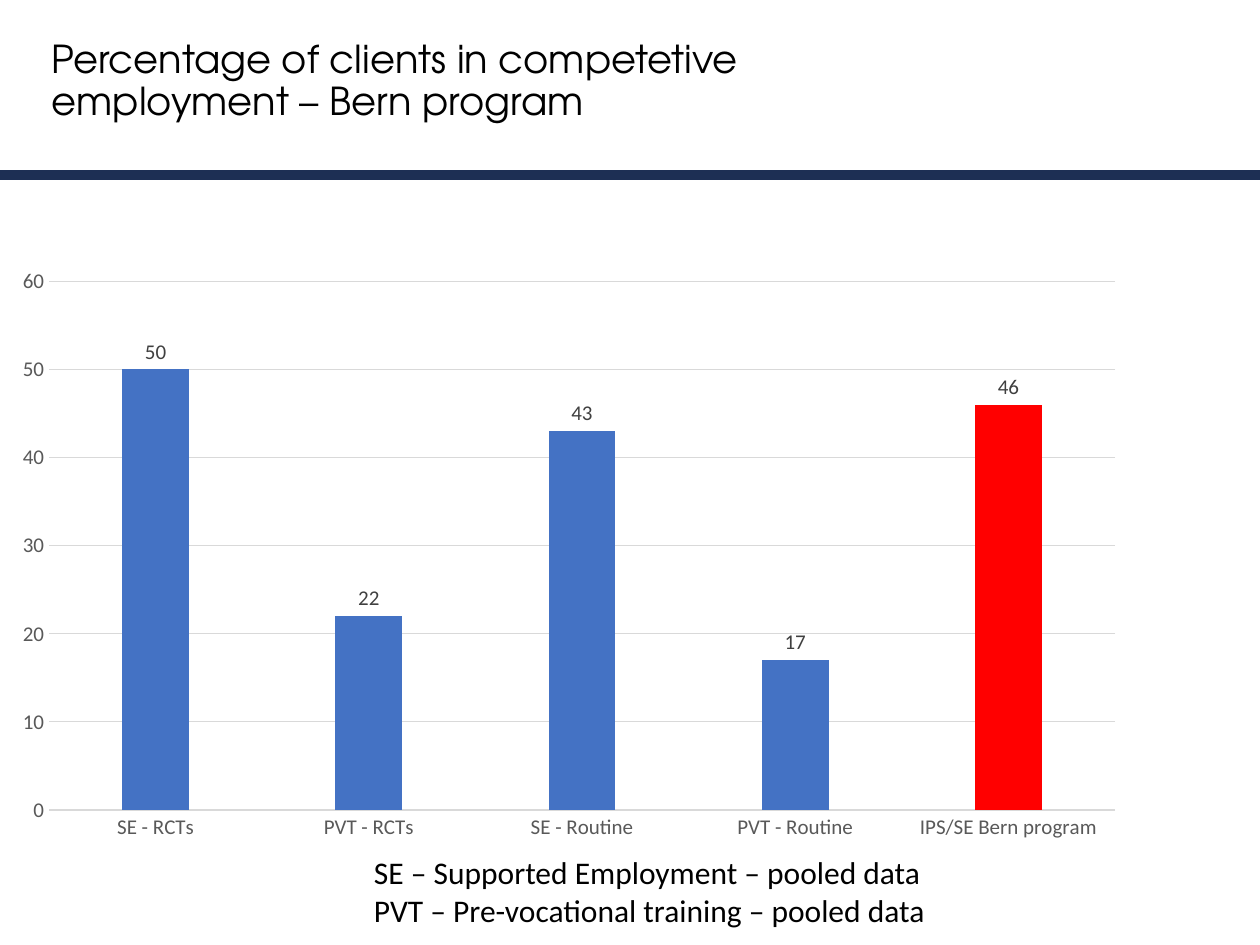
from lxml import etree
from pptx import Presentation
from pptx.chart.data import CategoryChartData
from pptx.dml.color import RGBColor
from pptx.enum.chart import XL_CHART_TYPE as ChartType, XL_LABEL_POSITION as LabelPos, XL_TICK_MARK as Tick
from pptx.enum.shapes import MSO_CONNECTOR as Connector
from pptx.enum.text import MSO_ANCHOR as Anchor
from pptx.oxml.ns import qn
from pptx.util import Inches, Pt

BLACK = RGBColor(0x00, 0x00, 0x00)
NAVY = RGBColor(0x1D, 0x2F, 0x54)
BLUE = RGBColor(0x44, 0x72, 0xC4)
RED = RGBColor(0xFF, 0x00, 0x00)
GRID_GRAY = RGBColor(0xD9, 0xD9, 0xD9)
AXIS_GRAY = RGBColor(0x59, 0x59, 0x59)
LABEL_GRAY = RGBColor(0x40, 0x40, 0x40)

TITLE_FONT = "TeX Gyre Adventor"
BODY_FONT = "Calibri"

EMPLOYMENT = {
    "SE - RCTs": 50,
    "PVT - RCTs": 22,
    "SE - Routine": 43,
    "PVT - Routine": 17,
    "IPS/SE Bern program": 46,
}
HIGHLIGHT = "IPS/SE Bern program"
ABBREVIATIONS = [
    "SE – Supported Employment – pooled data",
    "PVT – Pre-vocational training – pooled data",
]


def set_font(font, name, size, color):
    font.name = name
    font.size = Pt(size)
    font.color.rgb = color


def set_line(line, color, width):
    line.color.rgb = color
    line.width = Pt(width)


def add_text(slide, box, lines, font_name, size, anchor=Anchor.TOP, line_spacing=None):
    frame = slide.shapes.add_textbox(*map(Inches, box)).text_frame
    frame.word_wrap = True
    frame.vertical_anchor = anchor
    frame.text = "\n".join(lines)
    for paragraph in frame.paragraphs:
        paragraph.line_spacing = line_spacing
        set_font(paragraph.font, font_name, size, BLACK)


def add_header_rule(slide, left, right, y):
    rule = slide.shapes.add_connector(
        Connector.STRAIGHT, Inches(left), Inches(y), Inches(right), Inches(y))
    set_line(rule.line, NAVY, 6)
    etree.SubElement(rule._element.spPr, qn("a:effectLst"))


def style_axes(chart):
    for axis in (chart.category_axis, chart.value_axis):
        axis.major_tick_mark = axis.minor_tick_mark = Tick.NONE
        set_font(axis.tick_labels.font, BODY_FONT, 12, AXIS_GRAY)
    set_line(chart.category_axis.format.line, GRID_GRAY, 0.75)
    values = chart.value_axis
    values.minimum_scale, values.maximum_scale, values.major_unit = 0, 60, 10
    values.format.line.fill.background()
    set_line(values.major_gridlines.format.line, GRID_GRAY, 0.75)


def add_employment_chart(slide, box):
    data = CategoryChartData()
    data.categories = list(EMPLOYMENT)
    data.add_series("Series 1", list(EMPLOYMENT.values()))
    chart = slide.shapes.add_chart(
        ChartType.COLUMN_CLUSTERED, *map(Inches, box), data).chart
    chart.has_title = False
    chart.has_legend = False
    set_font(chart.font, BODY_FONT, 10, BLACK)
    style_axes(chart)

    plot = chart.plots[0]
    plot.gap_width = 219
    plot.overlap = -27
    plot.vary_by_categories = False

    columns = plot.series[0]
    columns.format.fill.solid()
    columns.format.fill.fore_color.rgb = BLUE
    bern_fill = columns.points[list(EMPLOYMENT).index(HIGHLIGHT)].format.fill
    bern_fill.solid()
    bern_fill.fore_color.rgb = RED

    labels = columns.data_labels
    labels.show_value = True
    labels.position = LabelPos.OUTSIDE_END
    set_font(labels.font, BODY_FONT, 12, LABEL_GRAY)


def main():
    prs = Presentation()
    prs.slide_width, prs.slide_height = Inches(10), Inches(7.5)
    slide = prs.slides.add_slide(prs.slide_layouts[6])
    add_header_rule(slide, -0.59, 10.16, 1.39)
    add_text(slide, (0.31, 0.23, 7.5, 0.84),
             ["Percentage of clients in competetive employment – Bern program"],
             TITLE_FONT, 22, Anchor.MIDDLE, 0.9)
    add_employment_chart(slide, (0, 2.04, 9.03, 4.72))
    add_text(slide, (2.87, 6.72, 4.8, 0.71), ABBREVIATIONS, BODY_FONT, 18)
    prs.save("out.pptx")


if __name__ == "__main__":
    main()
